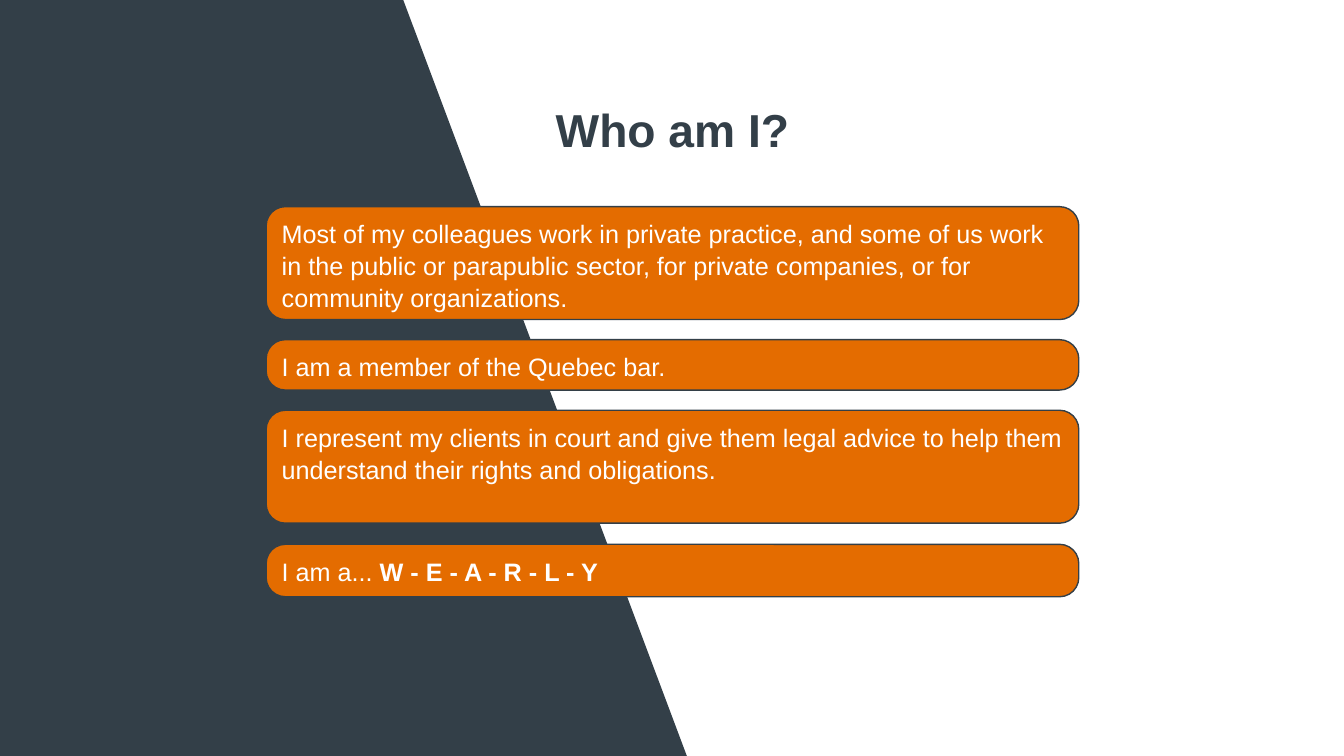
from pptx import Presentation
from pptx.dml.color import RGBColor
from pptx.enum.shapes import MSO_SHAPE
from pptx.enum.text import MSO_ANCHOR, PP_ALIGN
from pptx.util import Inches, Pt

SLATE = RGBColor(0x33, 0x3F, 0x48)
ORANGE = RGBColor(0xE4, 0x6C, 0x00)
WHITE = RGBColor(0xFF, 0xFF, 0xFF)

WIDE, HIGH = 13.33, 7.5
LEFT, SPAN = 2.64, 8.06   # column of cards
ROUND = 0.19              # corner radius of every card

# Top, height and (text, bold) runs of each card
CARDS = [
    (2.05, 1.12, [("Most of my colleagues work in private practice, and some "
                   "of us work in the public or parapublic sector, for private "
                   "companies, or for community organizations.", False)]),
    (3.37, 0.5, [("I am a member of the Quebec bar.", False)]),
    (4.07, 1.12, [("I represent my clients in court and give them legal advice "
                   "to help them understand their rights and obligations.", False)]),
    (5.4, 0.52, [("I am a... ", False), ("W - E - A - R - L - Y", True)]),
]


def style(run, size, color, bold):
    font = run.font
    font.name = "Arial"
    font.size = Pt(size)
    font.bold = bold
    font.color.rgb = color


def add_panel(slide):
    """Dark side panel with a slanted right edge."""
    pen = slide.shapes.build_freeform(0, 0, scale=Inches(1))
    pen.add_line_segments([(4.17, 0), (6.66, HIGH), (0, HIGH)], close=True)
    panel = pen.convert_to_shape()
    panel.shadow.inherit = False
    panel.fill.solid()
    panel.fill.fore_color.rgb = SLATE
    panel.line.fill.background()


def add_card(slide, top, height, parts):
    card = slide.shapes.add_shape(
        MSO_SHAPE.ROUNDED_RECTANGLE,
        Inches(LEFT), Inches(top), Inches(SPAN), Inches(height))
    card.adjustments[0] = ROUND / height
    card.shadow.inherit = False
    card.fill.solid()
    card.fill.fore_color.rgb = ORANGE
    card.line.color.rgb = SLATE
    card.line.width = Pt(1)

    frame = card.text_frame
    frame.word_wrap = True
    frame.vertical_anchor = MSO_ANCHOR.TOP
    para = frame.paragraphs[0]
    para.alignment = PP_ALIGN.LEFT
    para.line_spacing = 1.05
    for text, bold in parts:
        run = para.add_run()
        run.text = text
        style(run, 18, WHITE, bold)


def add_title(slide, text):
    box = slide.shapes.add_textbox(
        Inches(4.08), Inches(0.96), Inches(5.18), Inches(0.66))
    frame = box.text_frame
    frame.word_wrap = True
    frame.text = text
    para = frame.paragraphs[0]
    para.alignment = PP_ALIGN.CENTER
    style(para.runs[0], 33, SLATE, True)


def main():
    deck = Presentation()
    deck.slide_width = Inches(WIDE)
    deck.slide_height = Inches(HIGH)
    slide = deck.slides.add_slide(deck.slide_layouts[6])

    # Backdrop, cards, heading
    add_panel(slide)
    for top, height, parts in CARDS:
        add_card(slide, top, height, parts)
    add_title(slide, "Who am I?")

    deck.save("out.pptx")


if __name__ == "__main__":
    main()
